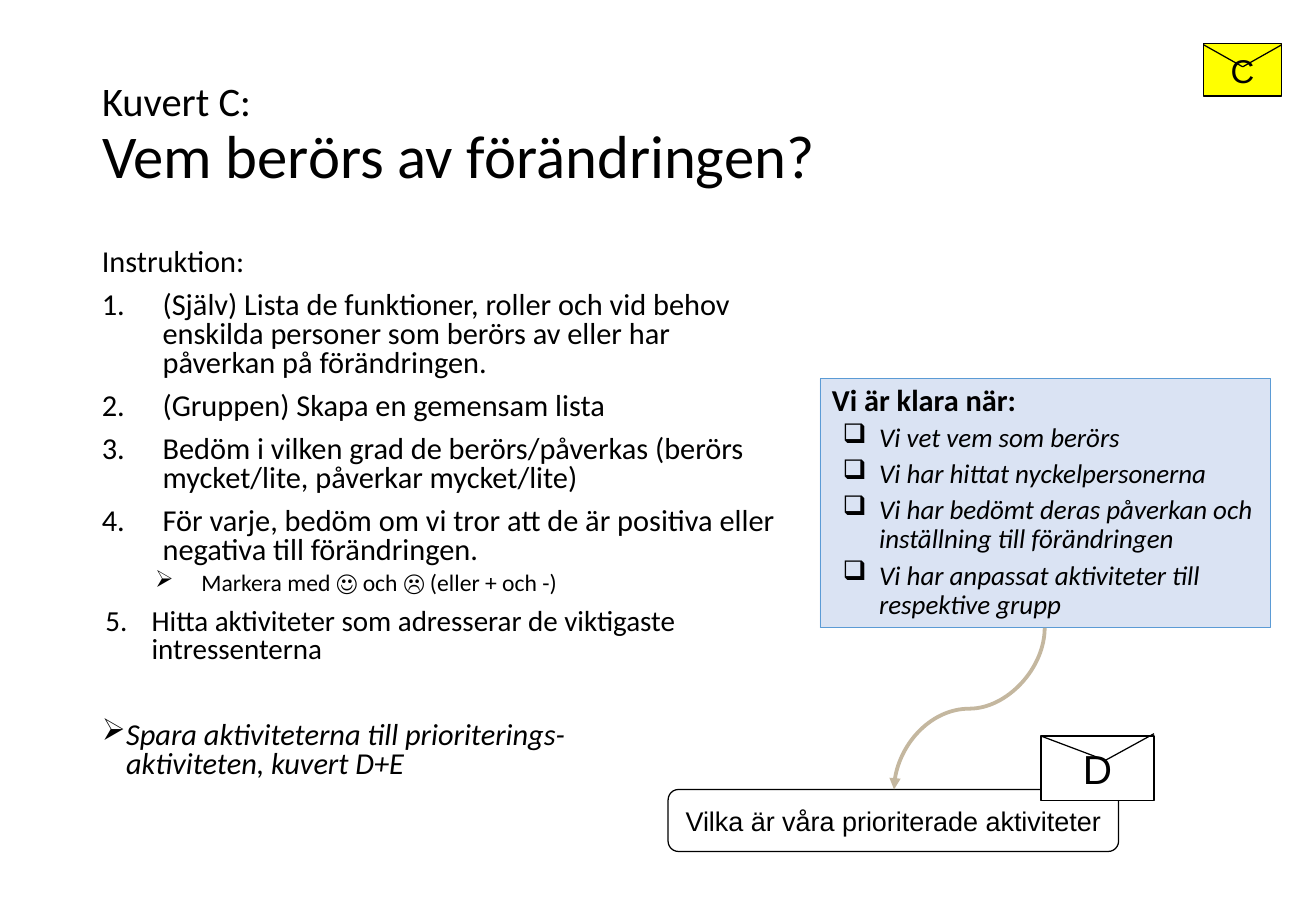
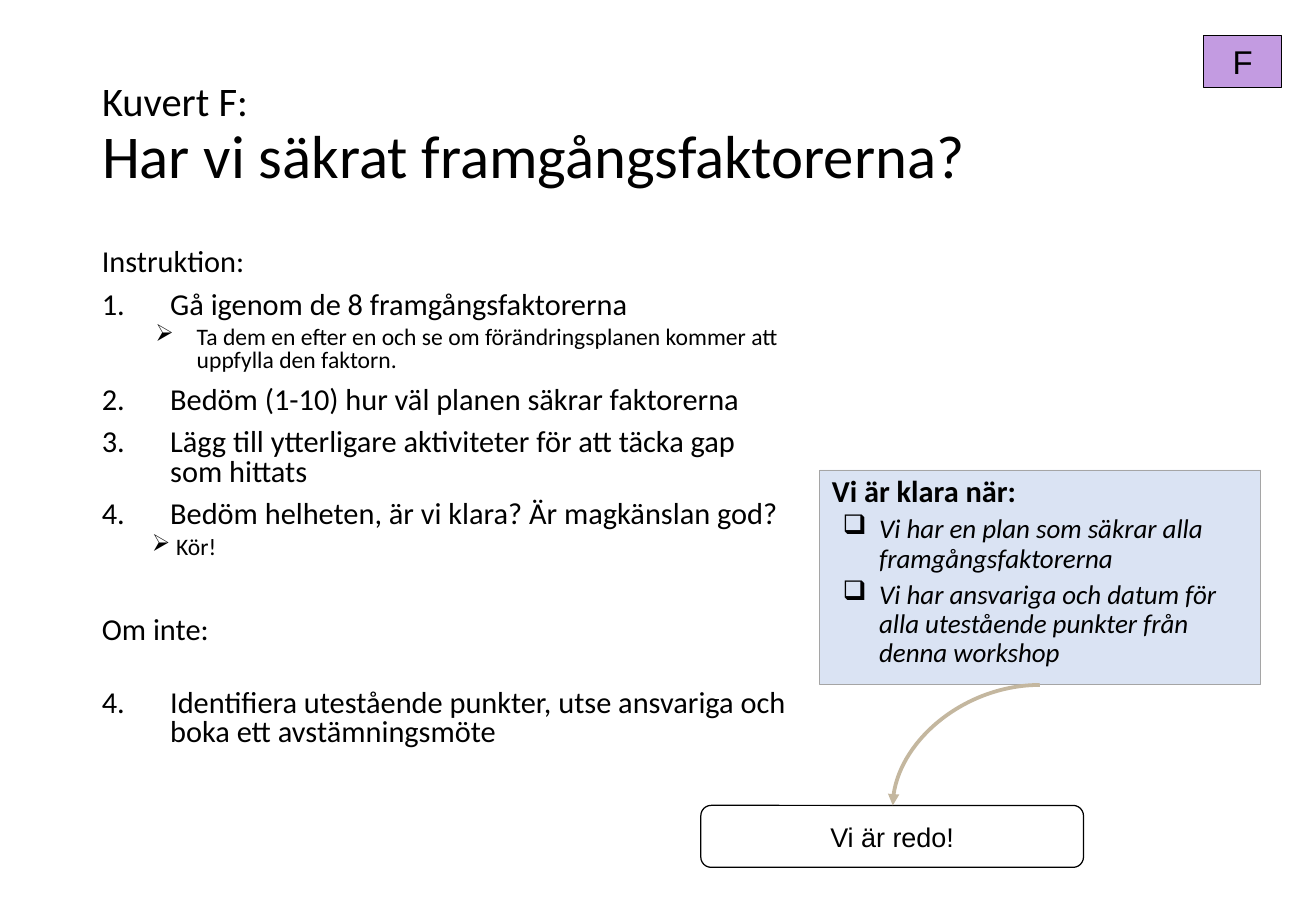
"""Builds two workshop instruction slides, one for each envelope."""
from lxml import etree
from pptx import Presentation
from pptx import util as u
from pptx.dml import color
from pptx.enum import shapes, text
from pptx.oxml import ns

BODY_FONT, LABEL_FONT = "Calibri", "Arial"
BLACK, WHITE, PALE_BLUE, SAND = "000000", "FFFFFF", "DAE3F3", "C4B79F"
TITLE_BOX = (53.3, 28.8, 672.5, 104.4)
BADGE_LEFT, BADGE_WIDTH, BADGE_HEIGHT = 713.5, 46, 31

# style: (left margin, hanging indent, size, space before, bullet, italic)
STYLES = {
    "plain": (0, 0, 18, 8.1, None, False),
    "number": (36, 36, 18, 8.1, "number", False),
    "wide number": (40.5, 40.5, 18, 8.1, "number", False),
    "last number": (29.5, 27.4, 17.2, 8.1, "number", False),
    "mark": (59, 27.5, 14, 4.1, "➢", False),
    "detail": (56.2, 24.5, 14, 4.1, "➢", False),
    "go": (44, 14.4, 14, 4.1, "➢", False),
    "after gap": (0, 0, 18, 33.8, None, False),
    "number after gap": (40.5, 40.5, 18, 25.7, "number", False),
    "closing": (14.4, 14.4, 18, 33.8, "➢", True),
    "check": (28, 21.6, 16, 4.1, "❑", True),
}

SLIDES = [
    {
        "title": ("Kuvert C:", "Vem berörs av förändringen?"),
        "badge": ("C", "FFFF00", 26),
        "badge flap": [(713.5, 26.6), (736.6, 39.6), (759.6, 26.6)],
        "body width": 419,
        "body": [
            ("plain", "Instruktion:"),
            ("number", "(Själv) Lista de funktioner, roller och vid behov enskilda "
                       "personer som berörs av eller har påverkan på förändringen.", 1),
            ("number", "(Gruppen) Skapa en gemensam lista", 2),
            ("number", "Bedöm i vilken grad de berörs/påverkas "
                       "(berörs mycket/lite, påverkar mycket/lite)", 3),
            ("number", "För varje, bedöm om vi tror att de är positiva eller "
                       "negativa till förändringen.", 4),
            ("mark", "Markera med ☺ och ☹ (eller + och -)"),
            ("last number", "Hitta aktiviteter som adresserar de viktigaste "
                            "intressenterna", 5),
            ("closing", "Spara aktiviteterna till prioriterings-\n"
                        "aktiviteten, kuvert D+E"),
        ],
        "done box": (486, 224.6, 267, 147.6),
        "done line": "5B9BD5",
        "done": ["Vi vet vem som berörs", "Vi har hittat nyckelpersonerna",
                 "Vi har bedömt deras påverkan och inställning till förändringen",
                 "Vi har anpassat aktiviteter till respektive grupp"],
        "next": "Vilka är våra prioriterade aktiviteter",
        "next box": (396, 468, 267, 36.7),
        "next envelope": ("D", (617, 436.3, 67, 38.2)),
        "next flap": [(617, 436.3), (655.2, 450.7), (684, 434.9)],
        "arrow": ((619.2, 372.2), (529.9, 468)),
        "s-shaped": True,
    },
    {
        "title": ("Kuvert F:", "Har vi säkrat framgångsfaktorerna?"),
        "badge": ("F", "C39BE1", 20.9),
        "body width": 421.2,
        "body": [
            ("plain", "Instruktion:"),
            ("wide number", "Gå igenom de 8 framgångsfaktorerna", 1),
            ("detail", "Ta dem en efter en och se om förändringsplanen kommer "
                       "att uppfylla den faktorn."),
            ("wide number", "Bedöm (1-10) hur väl planen säkrar faktorerna", 2),
            ("wide number", "Lägg till ytterligare aktiviteter för att täcka gap "
                            "som hittats", 3),
            ("wide number", "Bedöm helheten, är vi klara? Är magkänslan god?", 4),
            ("go", "Kör!"),
            ("after gap", "Om inte:"),
            ("number after gap", "Identifiera utestående punkter, utse ansvariga och "
                                 "boka ett avstämningsmöte", 4),
        ],
        "done box": (486, 278.6, 261.4, 127.4),
        "done line": "A5A5A5",
        "done": ["Vi har en plan som säkrar alla framgångsfaktorerna",
                 "Vi har ansvariga och datum för alla utestående punkter från "
                 "denna workshop"],
        "next": "Vi är redo!",
        "next box": (415.4, 477.4, 226.8, 36.7),
        "arrow": ((616.3, 406), (529.2, 477.4)),
        "s-shaped": False,
    },
]


def rgb(value):
    """Turn a hex string into a colour."""
    return color.RGBColor.from_string(value)


def points(values):
    """Turn numbers into lengths in points."""
    return [u.Pt(value) for value in values]


def add_run(paragraph, words, size, font=BODY_FONT, bold=False, italic=False):
    """Add a black run, breaking the line at each newline."""
    for index, line in enumerate(words.split("\n")):
        if index:
            paragraph.add_line_break()
        run = paragraph.add_run()
        run.text = line
        run.font.name, run.font.size = font, u.Pt(size)
        run.font.bold, run.font.italic = bold, italic
        run.font.color.rgb = rgb(BLACK)


def add_paragraph(frame, style, words, spacing, start=None, bold=False):
    """Add a paragraph in a named style, with its bullet or number."""
    margin, hanging, size, before, bullet, italic = STYLES[style]
    first = not frame.paragraphs[0].runs
    paragraph = frame.paragraphs[0] if first else frame.add_paragraph()
    properties = paragraph._p.get_or_add_pPr()
    properties.set("marL", str(u.Pt(margin)))
    properties.set("indent", str(-u.Pt(hanging)))
    if bullet == "number":
        etree.SubElement(properties, ns.qn("a:buAutoNum"),
                         type="arabicPeriod", startAt=str(start))
    elif bullet:
        etree.SubElement(properties, ns.qn("a:buChar"), char=bullet)
    paragraph.alignment = text.PP_ALIGN.LEFT
    paragraph.line_spacing = spacing
    paragraph.space_before = u.Pt(0 if first else before)
    add_run(paragraph, words, size, bold=bold, italic=italic)


def add_box(slide, kind, place, fill, line, width=0.75):
    """Add a filled and outlined shape and return its text frame."""
    shape = slide.shapes.add_shape(kind, *points(place))
    shape.shadow.inherit = False
    shape.fill.solid()
    shape.fill.fore_color.rgb = rgb(fill)
    shape.line.color.rgb = rgb(line)
    shape.line.width = u.Pt(width)
    shape.text_frame.word_wrap = True
    return shape.text_frame


def add_label(slide, kind, place, fill, words, size):
    """Add a black-edged box with a centred label."""
    frame = add_box(slide, kind, place, fill, BLACK)
    frame.vertical_anchor = text.MSO_ANCHOR.MIDDLE
    frame.margin_top = frame.margin_bottom = u.Pt(3)
    frame.paragraphs[0].alignment = text.PP_ALIGN.CENTER
    add_run(frame.paragraphs[0], words, size, LABEL_FONT)


def add_line(slide, kind, begin, end, line, width):
    """Add a connector without a shadow."""
    connector = slide.shapes.add_connector(kind, *points(begin + end))
    connector.line.color.rgb = rgb(line)
    connector.line.width = u.Pt(width)
    etree.SubElement(connector._element.spPr, ns.qn("a:effectLst"))
    return connector


def add_flap(slide, corners):
    """Draw the two edges of an envelope flap."""
    left, tip, right = corners
    for corner in (left, right):
        add_line(slide, shapes.MSO_CONNECTOR.STRAIGHT, corner, tip, BLACK, 0.75)


def add_arrow(slide, begin, end, s_shaped):
    """Add a curved arrow, either S-shaped and vertical or a single bend."""
    if s_shaped:
        middle_x, middle_y = (begin[0] + end[0]) / 2, (begin[1] + end[1]) / 2
        half_width, half_height = (end[1] - begin[1]) / 2, (begin[0] - end[0]) / 2
        begin = (middle_x - half_width, middle_y - half_height)
        end = (middle_x + half_width, middle_y + half_height)
    connector = add_line(slide, shapes.MSO_CONNECTOR.CURVE, begin, end, SAND, 2.25)
    properties = connector._element.spPr
    if s_shaped:
        properties.find(ns.qn("a:xfrm")).set("rot", "5400000")
    else:
        properties.find(ns.qn("a:prstGeom")).set("prst", "curvedConnector2")
    etree.SubElement(properties.find(ns.qn("a:ln")), ns.qn("a:tailEnd"), type="triangle")


def add_title(slide, lead, heading):
    """Place and fill the title placeholder."""
    title = slide.shapes.title
    title.left, title.top, title.width, title.height = points(TITLE_BOX)
    frame = title.text_frame
    frame.auto_size = text.MSO_AUTO_SIZE.NONE
    frame.vertical_anchor = text.MSO_ANCHOR.MIDDLE
    paragraph = frame.paragraphs[0]
    paragraph.alignment = text.PP_ALIGN.LEFT
    paragraph.line_spacing = 0.9
    add_run(paragraph, lead, 24)
    paragraph.add_line_break()
    add_run(paragraph, heading, 36)


def build_slide(presentation, content):
    """Build one envelope slide."""
    slide = presentation.slides.add_slide(presentation.slide_layouts[5])
    rectangle = shapes.MSO_SHAPE.RECTANGLE
    add_title(slide, *content["title"])

    body = slide.shapes.add_textbox(*points((53.3, 144, content["body width"], 342.7)))
    body.text_frame.word_wrap = True
    for style, words, *start in content["body"]:
        add_paragraph(body.text_frame, style, words, 0.8, *start)

    done = add_box(slide, rectangle, content["done box"], PALE_BLUE,
                   content["done line"], 0.5)
    done.vertical_anchor = text.MSO_ANCHOR.TOP
    add_paragraph(done, "plain", "Vi är klara när:", 0.9, bold=True)
    for words in content["done"]:
        add_paragraph(done, "check", words, 0.9)

    add_label(slide, shapes.MSO_SHAPE.ROUNDED_RECTANGLE, content["next box"], WHITE,
              content["next"], 16)
    if "next envelope" in content:
        letter, place = content["next envelope"]
        add_label(slide, rectangle, place, WHITE, letter, 24)
        add_flap(slide, content["next flap"])
    add_arrow(slide, *content["arrow"], content["s-shaped"])

    letter, fill, top = content["badge"]
    add_label(slide, rectangle, (BADGE_LEFT, top, BADGE_WIDTH, BADGE_HEIGHT), fill,
              letter, 19.5)
    if "badge flap" in content:
        add_flap(slide, content["badge flap"])


def main():
    """Build and save the presentation."""
    presentation = Presentation()
    presentation.slide_width, presentation.slide_height = points((780, 540))
    for content in SLIDES:
        build_slide(presentation, content)
    presentation.save("out.pptx")


if __name__ == "__main__":
    main()
